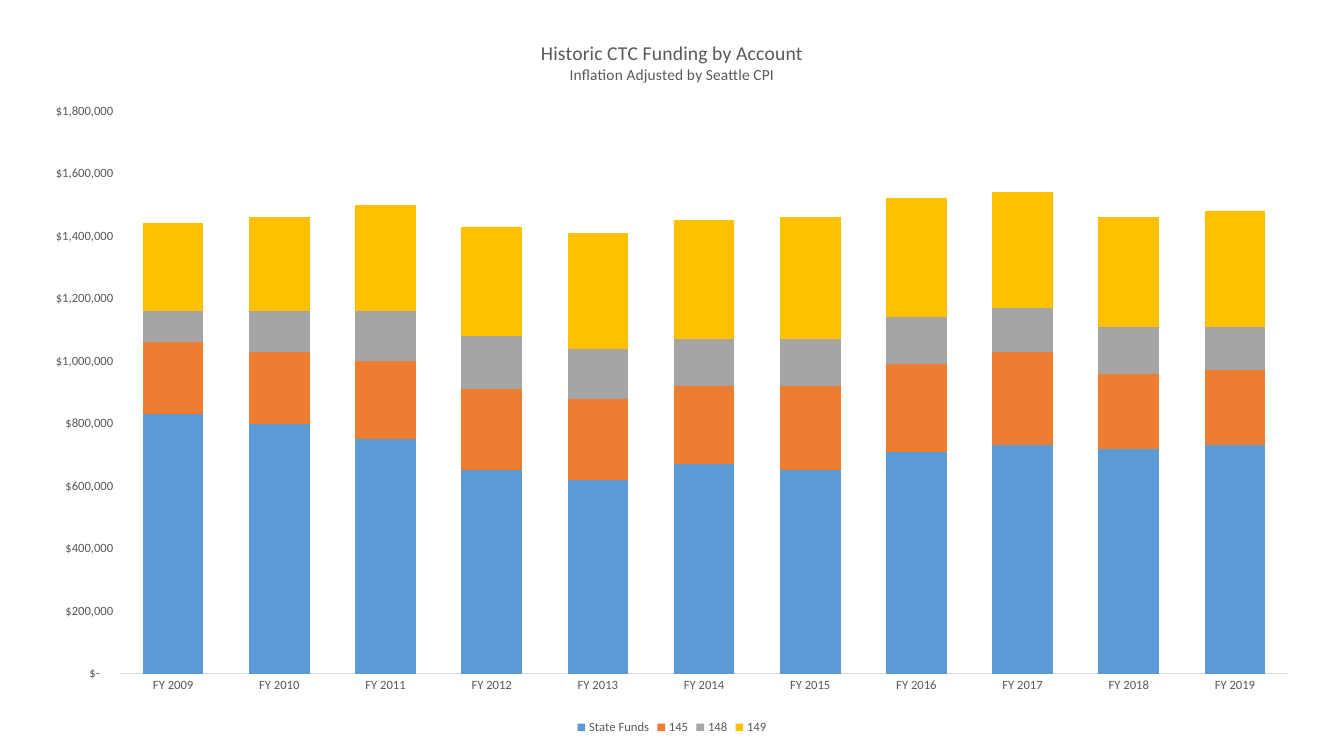
import pptx
import pptx.util
import pptx.chart.data
import pptx.dml.color
import pptx.enum.chart
import pptx.oxml

Pt = pptx.util.Pt
RGB = pptx.dml.color.RGBColor
GREY = RGB(0x59, 0x59, 0x59)
PALE = RGB(0xD9, 0xD9, 0xD9)
BLUE = RGB(0x5B, 0x9B, 0xD5)
ORANGE = RGB(0xED, 0x7D, 0x31)
SILVER = RGB(0xA5, 0xA5, 0xA5)
GOLD = RGB(0xFF, 0xC0, 0x00)

FUNDS = [
    ("State Funds", BLUE, [830, 800, 750, 650, 620, 670, 650, 710, 730, 720, 730]),
    ("145", ORANGE, [230, 230, 250, 260, 260, 250, 270, 280, 300, 240, 240]),
    ("148", SILVER, [100, 130, 160, 170, 160, 150, 150, 150, 140, 150, 140]),
    ("149", GOLD, [280, 300, 340, 350, 370, 380, 390, 380, 370, 350, 370]),
]
TITLE = [("Historic CTC Funding by Account", 14), ("Inflation Adjusted by Seattle CPI", 11)]
MONEY = '_("$"* #,##0_);_("$"* \\(#,##0\\);_("$"* "-"??_);_(@_)'


def style(font, size):
    font.name = "Calibri"
    font.size = Pt(size)
    font.bold = False
    font.color.rgb = GREY


deck = pptx.Presentation()
deck.slide_width = pptx.util.Inches(13.33)
deck.slide_height = pptx.util.Inches(7.5)
wide, high = deck.slide_width, deck.slide_height
slide = deck.slides.add_slide(deck.slide_layouts[6])

data = pptx.chart.data.CategoryChartData(number_format=MONEY)
data.categories = [f"FY {year}" for year in range(2009, 2020)]
for name, color, vals in FUNDS:
    data.add_series(name, [val * 1000 for val in vals])

left, top = int(wide * 0.0225), int(high * 0.0227)
chart = slide.shapes.add_chart(
    pptx.enum.chart.XL_CHART_TYPE.COLUMN_STACKED,
    left, top, wide - 2 * left, high - 2 * top, data).chart
style(chart.font, 10)

chart.has_title = True
frame = chart.chart_title.text_frame
frame.text = "\n".join(text for text, size in TITLE)
for para, (text, size) in zip(frame.paragraphs, TITLE):
    style(para.runs[0].font, size)
chart.chart_title.include_in_layout = False

chart.has_legend = True
chart.legend.position = pptx.enum.chart.XL_LEGEND_POSITION.BOTTOM
chart.legend.include_in_layout = False
style(chart.legend.font, 9)

plot = chart.plots[0]
plot.gap_width = 75
plot.overlap = 100
plot.vary_by_categories = False
for bar, (name, color, vals) in zip(plot.series, FUNDS):
    bar.format.fill.solid()
    bar.format.fill.fore_color.rgb = color
    bar.format.line.fill.background()

years, money = chart.category_axis, chart.value_axis
for axis in (years, money):
    axis.has_major_gridlines = False
    axis.major_tick_mark = pptx.enum.chart.XL_TICK_MARK.NONE
    axis.minor_tick_mark = pptx.enum.chart.XL_TICK_MARK.NONE
    style(axis.tick_labels.font, 9)
years.format.line.color.rgb = PALE
years.format.line.width = Pt(0.75)
money.format.line.fill.background()
money.minimum_scale = 0
money.maximum_scale = 1800000
money.major_unit = 200000
money.tick_labels.number_format = MONEY
money.tick_labels.number_format_is_linked = False

area = chart._chartSpace.chart.plotArea
for old in area.xpath("c:layout"):
    area.remove(old)
area.insert(0, pptx.oxml.parse_xml(
    '<c:layout xmlns:c="http://schemas.openxmlformats.org/drawingml/2006/chart">'
    '<c:manualLayout><c:layoutTarget val="inner"/>'
    '<c:xMode val="edge"/><c:yMode val="edge"/>'
    '<c:x val="0.07"/><c:y val="0.13"/><c:w val="0.91"/><c:h val="0.78"/>'
    '</c:manualLayout></c:layout>'))

deck.save("out.pptx")
